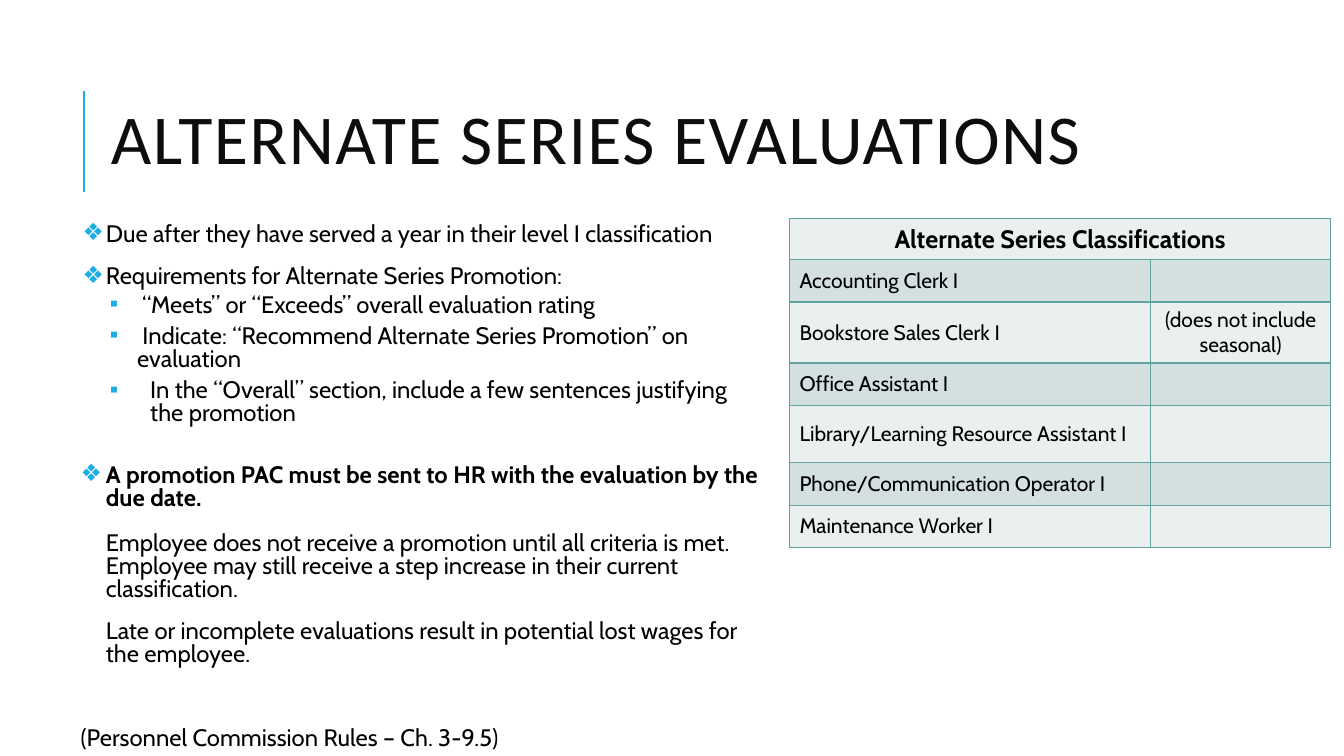
import pptx
import pptx.util
import pptx.dml.color
import pptx.enum.shapes
import pptx.enum.text
import pptx.oxml.ns
import lxml.etree

PX = 9144  # EMU per px, 100 px to the inch
COLORS = {"accent": "1CADE4", "title": "0D0D0D", "text": "000000",
          "border": "62A39F", "light": "EAF0F0", "dark": "D3E0DF"}


def style(font, name, size, color, bold=False):
    font.name, font.size, font.bold = name, pptx.util.Pt(size), bold
    font.color.rgb = pptx.dml.color.RGBColor.from_string(COLORS[color])


def add_xml(parent, tag, **attrs):
    return lxml.etree.SubElement(parent, pptx.oxml.ns.qn(tag), attrs)


prs = pptx.Presentation()
prs.slide_width, prs.slide_height = 1333 * PX, 750 * PX
s = prs.slides.add_slide(prs.slide_layouts[1])

# Accent line beside the title
line = s.shapes.add_connector(pptx.enum.shapes.MSO_CONNECTOR.STRAIGHT,
                              83 * PX, 190 * PX, 83 * PX, 90 * PX)
line.line.color.rgb = pptx.dml.color.RGBColor.from_string(COLORS["accent"])
line.line.width = pptx.util.Pt(1.5)
add_xml(line._element.spPr, "a:effectLst")

# Title
title = s.shapes.title
title.left, title.top, title.width, title.height = 100 * PX, 102 * PX, 1000 * PX, 83 * PX
tf = title.text_frame
tf.auto_size = pptx.enum.text.MSO_AUTO_SIZE.NONE
tf.vertical_anchor = pptx.enum.text.MSO_ANCHOR.MIDDLE
p = tf.paragraphs[0]
r = p.add_run()
r.text = "ALTERNATE SERIES EVALUATIONS"
p.alignment = pptx.enum.text.PP_ALIGN.LEFT
p.line_spacing = 0.8
style(r.font, "Calibri", 50, "title")
r._r.get_or_add_rPr().set("spc", "100")

# Body list: text, level, bullet, left margin px, first-line px, pt before, pt after, bold
ITEMS = [
    ("Due after they have served a year in their level I classification",
     0, "❖", 25, -23, 12, 2, False),
    ("Requirements for Alternate Series Promotion:", 0, "❖", 25, -23, 12, 2, False),
    ("“Meets” or “Exceeds” overall evaluation rating", 1, "▪", 61, -32, 2, 4, False),
    (" Indicate: “Recommend Alternate Series Promotion” on evaluation",
     1, "▪", 56, -27, 2, 4, False),
    ("In the “Overall” section, include a few sentences justifying the promotion",
     1, "▪", 69, -40, 2, 4, False),
    ("A promotion PAC must be sent to HR with the evaluation by the due date.",
     1, "❖", 25, -25, 24, 4, True),
    ("Employee does not receive a promotion until all criteria is met. "
     "Employee may still receive a step increase in their current classification.",
     0, None, 25, 0, 12, 2, False),
    ("Late or incomplete evaluations result in potential lost wages for the employee.",
     0, None, 25, 0, 12, 2, False),
    ("(Personnel Commission Rules – Ch. 3-9.5)", 0, None, 0, 0, 42, 2, False),
]
body = s.placeholders[1]
body.left, body.top, body.width, body.height = 75 * PX, 217 * PX, 683 * PX, 533 * PX
tf = body.text_frame
tf.auto_size = pptx.enum.text.MSO_AUTO_SIZE.NONE
tf.margin_left = tf.margin_right = tf.margin_top = tf.margin_bottom = 5 * PX
for i, (text, level, bullet, margin, indent, before, after, bold) in enumerate(ITEMS):
    p = tf.add_paragraph() if i else tf.paragraphs[0]
    p.text, p.level, p.line_spacing = text, level, 0.8
    p.space_before, p.space_after = pptx.util.Pt(before), pptx.util.Pt(after)
    pPr = p._p.get_or_add_pPr()
    pPr.set("marL", str(margin * PX))
    pPr.set("indent", str(indent * PX))
    if bullet:
        add_xml(add_xml(pPr, "a:buClr"), "a:srgbClr", val=COLORS["accent"])
        add_xml(pPr, "a:buChar", char=bullet)
    else:
        add_xml(pPr, "a:buNone")
    style(p.font, "Cabin", 17, "text", bold)

# Classifications table
ROWS = [
    ("Alternate Series Classifications", "", 38),
    ("Accounting Clerk I", "", 42),
    ("Bookstore Sales Clerk I", "(does not include seasonal)", 57),
    ("Office Assistant I", "", 42),
    ("Library/Learning Resource Assistant I", "", 57),
    ("Phone/Communication Operator I", "", 42),
    ("Maintenance Worker I", "", 42),
]
table = s.shapes.add_table(len(ROWS), 2, 783 * PX, 217 * PX, 537 * PX, 324 * PX).table
table.columns[0].width, table.columns[1].width = 358 * PX, 179 * PX
table.cell(0, 0).merge(table.cell(0, 1))
for i, (name, note, height) in enumerate(ROWS):
    table.rows[i].height = height * PX
    for j, text in enumerate((name, note)):
        cell = table.cell(i, j)
        cell.vertical_anchor = pptx.enum.text.MSO_ANCHOR.MIDDLE
        p = cell.text_frame.paragraphs[0]
        p.text = text
        if i == 0 or j == 1:
            p.alignment = pptx.enum.text.PP_ALIGN.CENTER
        style(p.font, "Cabin", 15 if i else 18, "text", i == 0)
        tcPr = cell._tc.get_or_add_tcPr()
        for side in ("a:lnL", "a:lnR", "a:lnT", "a:lnB"):
            ln = add_xml(tcPr, side, w="12700")
            add_xml(add_xml(ln, "a:solidFill"), "a:srgbClr", val=COLORS["border"])
        cell.fill.solid()
        cell.fill.fore_color.rgb = pptx.dml.color.RGBColor.from_string(
            COLORS["dark" if i % 2 else "light"])

prs.save("out.pptx")
